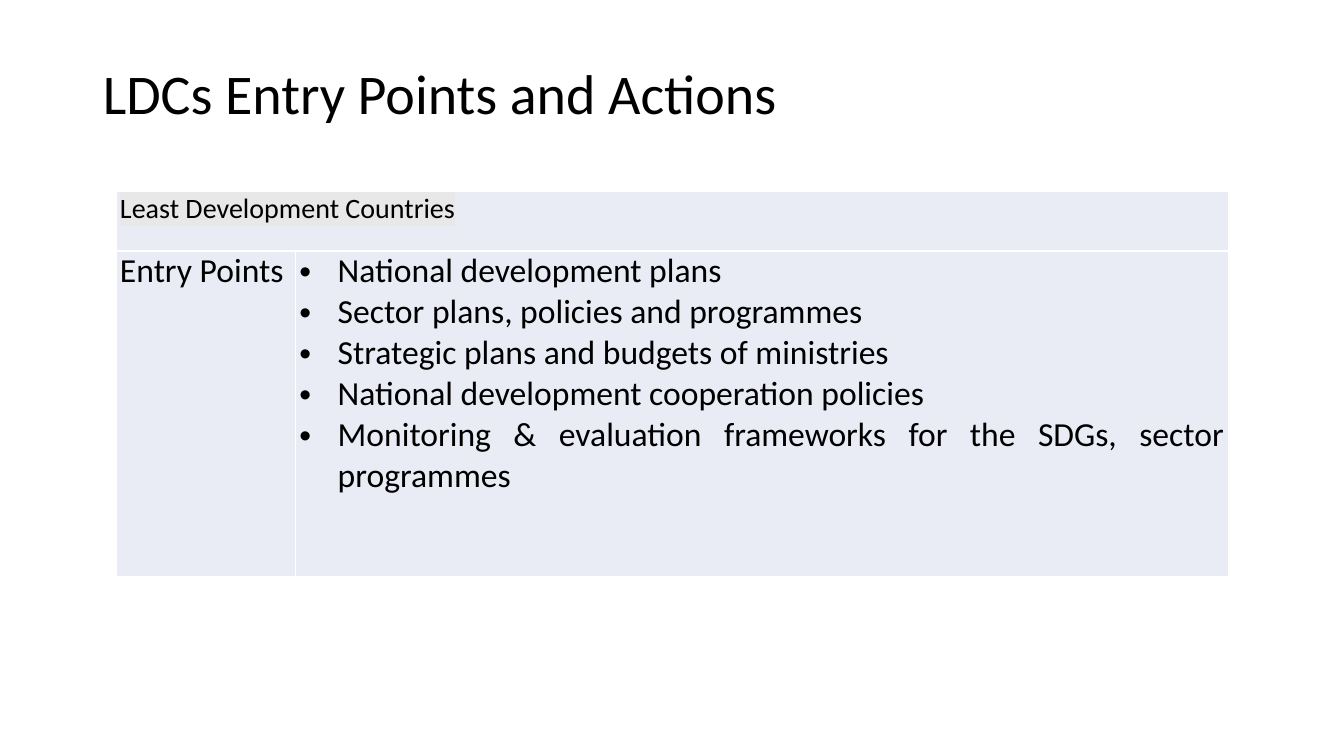
from dataclasses import dataclass

from lxml.etree import SubElement
from pptx import Presentation
from pptx.dml.color import RGBColor
from pptx.enum.text import MSO_ANCHOR, MSO_AUTO_SIZE, PP_ALIGN
from pptx.oxml.ns import qn
from pptx.slide import Slide
from pptx.table import Table, _Cell
from pptx.text.text import TextFrame, _Paragraph
from pptx.util import Inches, Length, Pt


@dataclass(frozen=True)
class Theme:
    font: str = "Calibri"
    ink: str = "000000"
    fill: str = "E9EBF5"
    mark: str = "E8E8E8"
    edge: str = "FFFFFF"
    title: int = 40
    head: int = 20
    body: int = 24


@dataclass(frozen=True)
class Box:
    """Place and size as percent of the slide."""
    left: float
    top: float
    width: float
    height: float


@dataclass(frozen=True)
class Entry:
    """Lines of one table cell."""
    row: int
    col: int
    lines: tuple[str, ...]
    size: int
    mark: bool = False
    list: bool = False


THEME = Theme()
WIDE, HIGH = Inches(13.33), Inches(7.5)
TITLE = Box(6.9, 4.93, 86.2, 15.73)
GRID = Box(8.63, 25.33, 82.75, 50.93)
COLS = (13.35, 69.4)
ROWS = (7.87, 43.06)
INDENT = Inches(0.38)
PAD = Inches(0.04)

CELLS = (
    Entry(0, 0, ("Least Development Countries",), THEME.head, mark=True),
    Entry(1, 0, ("Entry Points",), THEME.body),
    Entry(1, 1, (
        "National development plans",
        "Sector plans, policies and programmes",
        "Strategic plans and budgets of ministries",
        "National development cooperation policies",
        "Monitoring & evaluation frameworks for the SDGs, sector programmes",
    ), THEME.body, list=True),
)


def across(share: float) -> Length:
    return Length(round(WIDE * share / 100))


def down(share: float) -> Length:
    return Length(round(HIGH * share / 100))


def place(box: Box) -> tuple[Length, Length, Length, Length]:
    return across(box.left), down(box.top), across(box.width), down(box.height)


def add_run(para: _Paragraph, text: str, size: int, mark: bool = False) -> None:
    run = para.add_run()
    run.text = text
    font = run.font
    font.size, font.bold, font.name = Pt(size), False, THEME.font
    font.color.rgb = RGBColor.from_string(THEME.ink)
    if mark:
        props = run._r.get_or_add_rPr()
        light = SubElement(props, qn("a:highlight"))
        SubElement(light, qn("a:srgbClr"), val=THEME.mark)
        props.find(qn("a:solidFill")).addnext(light)


def add_dot(para: _Paragraph) -> None:
    props = para._p.get_or_add_pPr()
    props.set("marL", str(INDENT))
    props.set("indent", str(-INDENT))
    SubElement(props, qn("a:buFont"), typeface="Arial")
    SubElement(props, qn("a:buChar"), char="•")


def add_lines(frame: TextFrame, entry: Entry) -> None:
    for spot, line in enumerate(entry.lines):
        para = frame.add_paragraph() if spot else frame.paragraphs[0]
        para.alignment = PP_ALIGN.JUSTIFY
        if entry.list:
            add_dot(para)
        else:
            para.space_before, para.space_after = Pt(6), Pt(2)
        add_run(para, line, entry.size, entry.mark)


def style_cell(cell: _Cell) -> None:
    cell.margin_left = cell.margin_right = PAD
    cell.margin_top = cell.margin_bottom = 0
    cell.vertical_anchor = MSO_ANCHOR.TOP
    # Borders go ahead of the fill
    props = cell._tc.get_or_add_tcPr()
    for side in "LRTB":
        line = SubElement(props, qn(f"a:ln{side}"), w=str(Pt(1)))
        paint = SubElement(line, qn("a:solidFill"))
        SubElement(paint, qn("a:srgbClr"), val=THEME.edge)
    cell.fill.solid()
    cell.fill.fore_color.rgb = RGBColor.from_string(THEME.fill)


def add_title(slide: Slide, text: str) -> None:
    shape = slide.shapes.title
    shape.left, shape.top, shape.width, shape.height = place(TITLE)
    frame = shape.text_frame
    frame.word_wrap, frame.auto_size = True, MSO_AUTO_SIZE.NONE
    frame.vertical_anchor = MSO_ANCHOR.MIDDLE
    para = frame.paragraphs[0]
    para.alignment, para.line_spacing = PP_ALIGN.LEFT, 0.9
    add_run(para, text, THEME.title)


def add_grid(slide: Slide) -> Table:
    frame = slide.shapes.add_table(len(ROWS), len(COLS), *place(GRID))
    table = frame.table
    table.first_row = table.horz_banding = False
    for col, share in zip(table.columns, COLS):
        col.width = across(share)
    for row, share in zip(table.rows, ROWS):
        row.height = down(share)
    for cell in table.iter_cells():
        style_cell(cell)
    table.cell(0, 0).merge(table.cell(0, len(COLS) - 1))
    return table


def main() -> None:
    deck = Presentation()
    deck.slide_width, deck.slide_height = WIDE, HIGH
    slide = deck.slides.add_slide(deck.slide_layouts.get_by_name("Title Only"))

    # Title
    add_title(slide, "LDCs Entry Points and Actions")

    # Table of entry points
    table = add_grid(slide)
    for entry in CELLS:
        add_lines(table.cell(entry.row, entry.col).text_frame, entry)

    deck.save("out.pptx")


if __name__ == "__main__":
    main()
